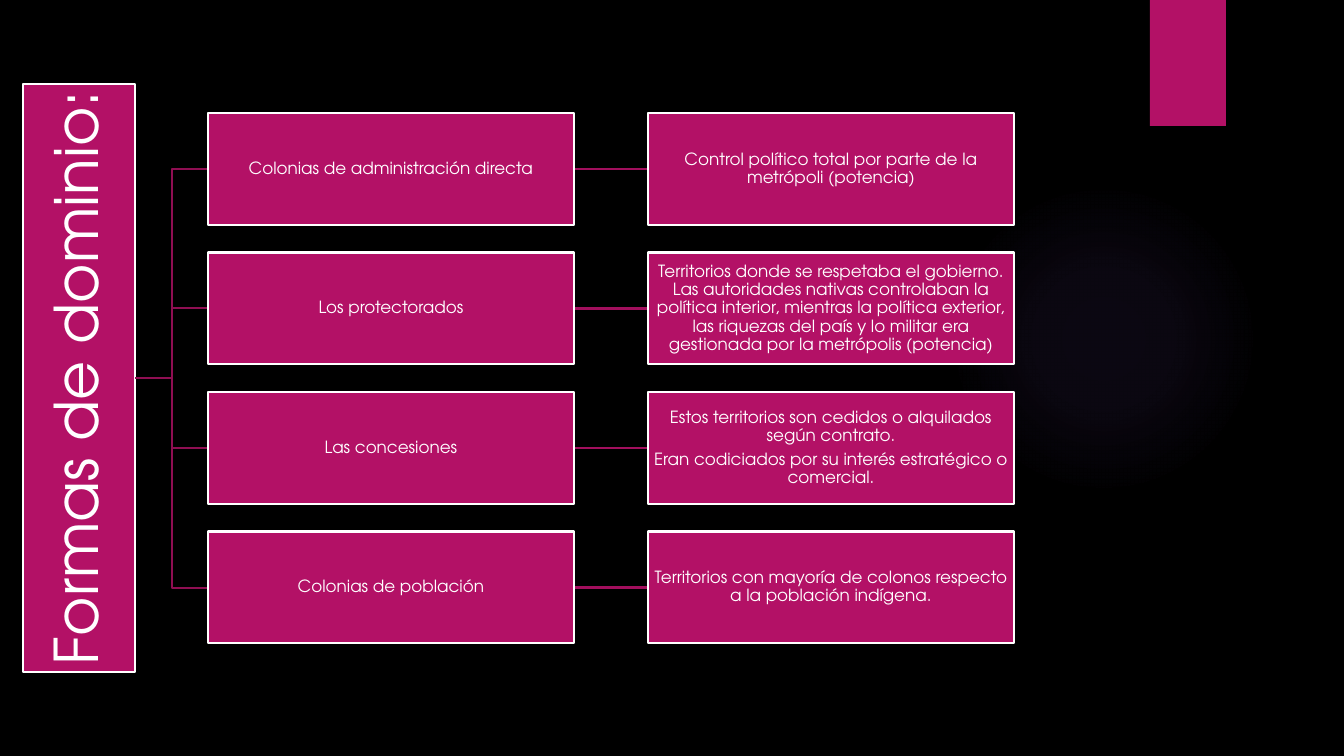
from lxml import etree
from pptx import Presentation
from pptx import util as u
from pptx.dml.color import RGBColor
from pptx.enum import shapes, text
from pptx.oxml import ns, parse_xml

PX = 914400 / 100.8  # EMU in one px
FONT = "TeX Gyre Adventor"
PINK, WHITE = "B31166", "FFFFFF"
TRUNK, LINK = "8F0E52", "A20F5D"

# Tree of rows: form of rule, then its description
ROWS = [
    ("Colonias de administración directa",
     ["Control político total por parte de la metrópoli (potencia)"]),
    ("Los protectorados",
     ["Territorios donde se respetaba el gobierno. Las autoridades nativas "
      "controlaban la política interior, mientras la política exterior, las "
      "riquezas del país y lo militar era gestionada por la metrópolis (potencia)"]),
    ("Las concesiones",
     ["Estos territorios son cedidos o alquilados según contrato.",
      "Eran codiciados por su interés estratégico o comercial."]),
    ("Colonias de población",
     ["Territorios con mayoría de colonos respecto a la población indígena."]),
]
ROOT_X, ROOT_Y = 135, 378  # right edge and middle of the root box
BEND = 172
FORM_X, NOTE_X = 208, 648
TOP, STEP = 113, 139.5
WIDE, HIGH = 366, 112


def px(n):
    return u.Emu(round(n * PX))


def color(code):
    return RGBColor.from_string(code)


def paint(shape, fill, line=None):
    shape.shadow.inherit = False
    shape.fill.solid()
    shape.fill.fore_color.rgb = color(fill)
    if line:
        shape.line.color.rgb = color(line)
        shape.line.width = u.Pt(1.5)
    else:
        shape.line.fill.background()


def write(shape, paras, size=12, pad=1):
    frame = shape.text_frame
    frame.word_wrap = True
    frame.auto_size = text.MSO_AUTO_SIZE.NONE
    frame.vertical_anchor = text.MSO_ANCHOR.MIDDLE
    frame.margin_left = frame.margin_right = px(pad)
    frame.margin_top = frame.margin_bottom = px(pad)
    for i, words in enumerate(paras):
        para = frame.paragraphs[0] if i == 0 else frame.add_paragraph()
        para.alignment = text.PP_ALIGN.CENTER
        para.line_spacing = 0.9
        para.space_before = u.Pt(0)
        para.space_after = u.Pt(round(size * 0.35, 1))
        run = para.add_run()
        run.text = words
        run.font.name = FONT
        run.font.size = u.Pt(size)
        run.font.color.rgb = color(WHITE)


def add_rect(slide, x, y, w, h, line=None):
    kind = shapes.MSO_SHAPE.RECTANGLE
    rect = slide.shapes.add_shape(kind, px(x), px(y), px(w), px(h))
    paint(rect, PINK, line)
    return rect


def add_box(slide, x, y, paras):
    write(add_rect(slide, x, y, WIDE, HIGH, WHITE), paras)


def add_trunk(slide, y):
    path = slide.shapes.build_freeform(ROOT_X, ROOT_Y, scale=PX)
    path.add_line_segments([(BEND, ROOT_Y), (BEND, y), (FORM_X, y)], close=False)
    elbow = path.convert_to_shape()
    paint(elbow, TRUNK, TRUNK)
    elbow.fill.background()


def add_link(slide, y):
    link = slide.shapes.add_connector(
        shapes.MSO_CONNECTOR.STRAIGHT, px(FORM_X + WIDE), px(y), px(NOTE_X), px(y))
    link.line.color.rgb = color(LINK)
    link.line.width = u.Pt(1.5)
    etree.SubElement(link._element.spPr, ns.qn("a:effectLst"))


def add_glow(slide):
    glow = slide.shapes.add_shape(
        shapes.MSO_SHAPE.OVAL, px(949), px(184), px(310), px(310))
    paint(glow, "9B6BF2")
    stops = "".join(
        f'<a:gs pos="{pos}000"><a:srgbClr val="9B6BF2">'
        f'<a:alpha val="{alpha}000"/></a:srgbClr></a:gs>'
        for pos, alpha in [(0, 7), (36, 6), (69, 0), (100, 0)])
    grad = parse_xml(
        f'<a:gradFill {ns.nsdecls("a")}><a:gsLst>{stops}</a:gsLst>'
        '<a:path path="circle"><a:fillToRect l="50000" t="50000" '
        'r="50000" b="50000"/></a:path></a:gradFill>')
    props = glow._element.spPr
    props.replace(props.find(ns.qn("a:solidFill")), grad)


def add_tab(slide):
    tab = add_rect(slide, 1150, 0, 76, 126)
    effect = tab._element.spPr.find(ns.qn("a:effectLst"))
    effect.append(parse_xml(
        f'<a:outerShdw {ns.nsdecls("a")} blurRad="38100" dist="25400" '
        'dir="5400000" rotWithShape="0"><a:srgbClr val="000000">'
        '<a:alpha val="45000"/></a:srgbClr></a:outerShdw>'))


def add_root(slide):
    root = slide.shapes.title
    root.left, root.top = px(-215), px(322)
    root.width, root.height = px(588), px(HIGH)
    root.rotation = 270
    paint(root, PINK, WHITE)
    write(root, ["Formas de dominio:"], size=43, pad=3)


def main():
    deck = Presentation()
    deck.slide_width, deck.slide_height = px(1344), px(756)
    slide = deck.slides.add_slide(deck.slide_layouts[5])
    slide.background.fill.solid()
    slide.background.fill.fore_color.rgb = color("000000")

    # Backdrop
    add_glow(slide)
    add_tab(slide)

    # Root and its branches
    add_root(slide)
    for i, (form, notes) in enumerate(ROWS):
        top = TOP + i * STEP
        mid = top + HIGH / 2
        add_trunk(slide, mid)
        add_link(slide, mid)
        add_box(slide, FORM_X, top, [form])
        add_box(slide, NOTE_X, top, notes)

    deck.save("out.pptx")


if __name__ == "__main__":
    main()
